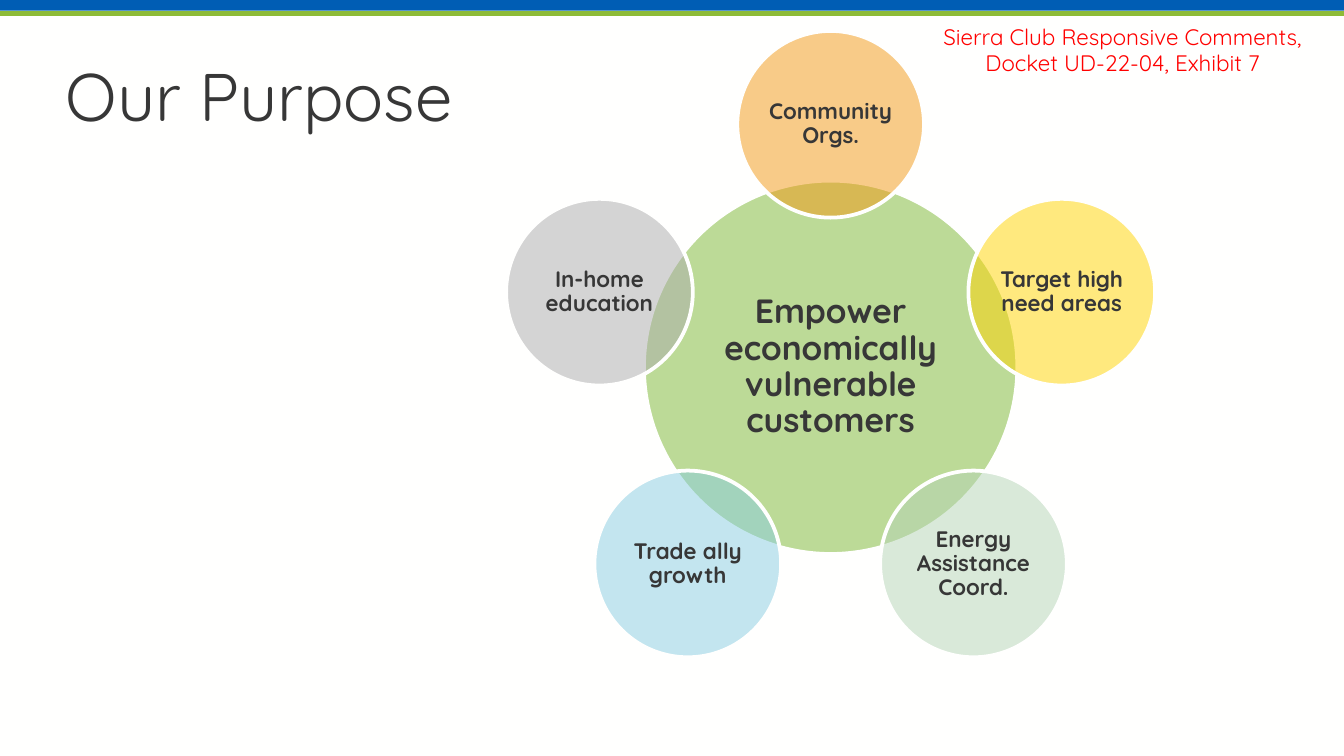
from math import cos, pi, sin

from lxml import etree
from pptx import Presentation
from pptx.dml.color import RGBColor
from pptx.enum.shapes import MSO_SHAPE
from pptx.enum.text import MSO_ANCHOR, PP_ALIGN
from pptx.oxml.ns import qn
from pptx.util import Pt

RECT, OVAL = MSO_SHAPE.RECTANGLE, MSO_SHAPE.OVAL
MIDDLE, BOTTOM = MSO_ANCHOR.MIDDLE, MSO_ANCHOR.BOTTOM
LEFT, CENTER = PP_ALIGN.LEFT, PP_ALIGN.CENTER

FONT = "Quicksand"
PAPER = RGBColor(0xFF, 0xFF, 0xFE)
INK = RGBColor(0x37, 0x37, 0x37)
RED = RGBColor(0xFF, 0x00, 0x00)
BLUE = RGBColor(0x00, 0x5D, 0xB4)
LIME = RGBColor(0x8E, 0xBB, 0x37)
GREEN = RGBColor(0x7A, 0xB7, 0x32)

PURPOSE = "Empower economically vulnerable customers"
SUPPORTS = [
    ("Community Orgs.", RGBColor(0xF2, 0x98, 0x13)),
    ("Target high need areas", RGBColor(0xFF, 0xD4, 0x00)),
    ("Energy Assistance Coord.", RGBColor(0xB5, 0xD4, 0xB5)),
    ("Trade ally growth", RGBColor(0x89, 0xCD, 0xE1)),
    ("In-home education", RGBColor(0xAB, 0xAB, 0xAB)),
]


def add_text(sp, text, size, color=INK, bold=False, align=CENTER, anchor=MIDDLE,
             spacing=0.9, inset=None):
    """Write one formatted paragraph into a shape."""
    tf = sp.text_frame
    tf.word_wrap = True
    tf.vertical_anchor = anchor
    if inset is not None:
        tf.margin_left = tf.margin_right = tf.margin_top = tf.margin_bottom = Pt(inset)
    p = tf.paragraphs[0]
    p.alignment = align
    p.line_spacing = spacing
    r = p.add_run()
    r.text = text
    r.font.name = FONT
    r.font.size = Pt(size)
    r.font.bold = bold
    r.font.color.rgb = color


def add_filled(slide, kind, x, y, w, h, fill, line=None, weight=0.75):
    """Add a flat preset shape with an optional outline."""
    sp = slide.shapes.add_shape(kind, Pt(x), Pt(y), Pt(w), Pt(h))
    sp.shadow.inherit = False
    sp.fill.solid()
    sp.fill.fore_color.rgb = fill
    if line is None:
        sp.line.fill.background()
    else:
        sp.line.color.rgb = line
        sp.line.width = Pt(weight)
    return sp


def add_label(slide, x, y, w, h, text, **fmt):
    """Add a text box."""
    add_text(slide.shapes.add_textbox(Pt(x), Pt(y), Pt(w), Pt(h)), text, **fmt)


def add_circle(slide, cx, cy, d, fill, text, size, inset):
    """Add a half-transparent labelled circle around a centre point."""
    sp = add_filled(slide, OVAL, cx - d / 2, cy - d / 2, d, d, fill, PAPER, 2)
    color = sp.fill._xPr.find(qn("a:solidFill"))[0]
    etree.SubElement(color, qn("a:alpha")).set("val", "50000")
    add_text(sp, text, size, bold=True, inset=inset)


def add_top_bands(slide, x, y, w):
    """Place the blue band and the green band along the top edge."""
    add_filled(slide, RECT, x, y, w, 5.76, BLUE)
    add_filled(slide, RECT, x, y + 6.2, w, 2.2, LIME, LIME)


def add_purpose_wheel(slide, x, y, size):
    """Place the central purpose and its ring of supports in a square box."""
    cx, cy = x + size / 2, y + size / 2
    small = 100
    reach = (size - small) / 2
    add_circle(slide, cx, cy, 2 * small, GREEN, PURPOSE, 18, 2)
    for i, (text, fill) in enumerate(SUPPORTS):
        angle = 2 * pi * i / len(SUPPORTS)
        add_circle(slide, cx + reach * sin(angle), cy - reach * cos(angle),
                   small, fill, text, 12, 1.2)


def main():
    """Build and save the slide."""
    prs = Presentation()
    prs.slide_width, prs.slide_height = Pt(720), Pt(405)
    slide = prs.slides.add_slide(prs.slide_layouts[6])
    slide.background.fill.solid()
    slide.background.fill.fore_color.rgb = PAPER
    add_top_bands(slide, 0, 0, 720)
    add_label(slide, 28.2, 26.6, 656, 49.7, "Our Purpose", size=36,
              align=LEFT, anchor=BOTTOM)
    add_purpose_wheel(slide, 264.8, 16.6, 360.4)
    add_label(slide, 487.4, 15.8, 228.2, 21.6,
              "Sierra Club Responsive Comments, Docket UD-22-04, Exhibit 7",
              size=12, color=RED, spacing=1.0)
    prs.save("out.pptx")


if __name__ == "__main__":
    main()
